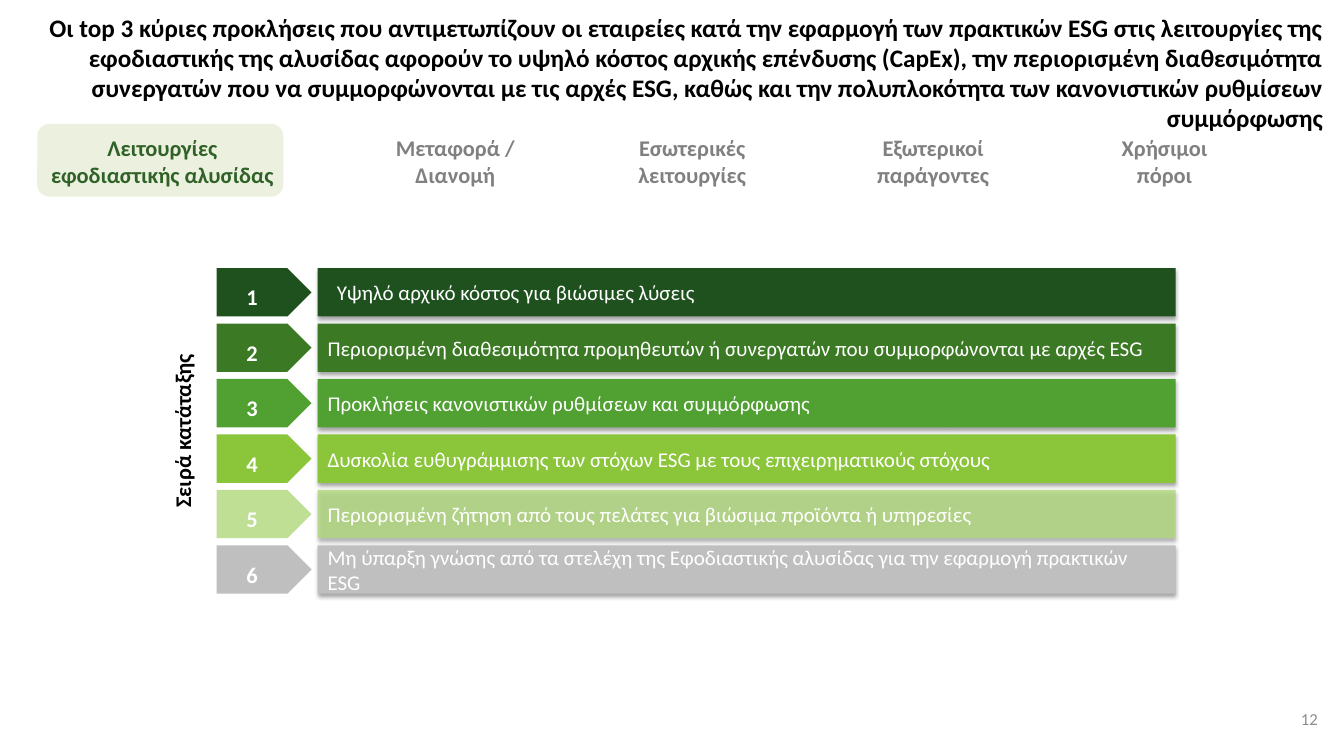
from dataclasses import dataclass

from lxml.etree import SubElement
from pptx import Presentation
from pptx.dml.color import RGBColor as RGB
from pptx.enum.shapes import MSO_SHAPE as SHAPE
from pptx.enum.text import MSO_ANCHOR as ANCHOR, PP_ALIGN as ALIGN
from pptx.oxml.ns import qn
from pptx.util import Pt

PX = 9144


@dataclass(frozen=True)
class Theme:
    font: str = "Calibri"
    title: int = 18
    heading: int = 16
    body: int = 15
    small: int = 12
    black: str = "000000"
    white: str = "FFFFFF"
    page: str = "8C8C8C"
    muted: str = "808080"
    active: str = "306228"
    highlight: str = "EBF1DE"
    ranks: tuple = ("1F511F", "3C7924", "50A032", "8AC53A", "B1D87E", "BFBFBF")
    faded: str = "B1D87E"
    faded_alpha: int = 82


class SlideBuilder:
    """Draws styled elements on one slide, with lengths in px."""

    def __init__(self, prs, theme):
        self.theme = theme
        self.slide = prs.slides.add_slide(prs.slide_layouts[6])

    def label(self, sp, text, size, color, bold=False, align=ALIGN.LEFT,
              anchor=ANCHOR.TOP, insets=(10, 5, 10, 5)):
        tf = sp.text_frame
        tf.word_wrap = True
        tf.vertical_anchor = anchor
        tf.margin_left, tf.margin_top, tf.margin_right, tf.margin_bottom = (
            v * PX for v in insets)
        tf.text = text
        for p in tf.paragraphs:
            p.alignment = align
            p.font.name = self.theme.font
            p.font.size = Pt(size)
            p.font.bold = bold
            p.font.color.rgb = RGB.from_string(color)

    def text(self, box, text, size, color, rotation=0, **style):
        sp = self.slide.shapes.add_textbox(*(v * PX for v in box))
        sp.rotation = rotation
        self.label(sp, text, size, color, **style)

    def shape(self, kind, box, fill, shadow=False):
        sp = self.slide.shapes.add_shape(kind, *(v * PX for v in box))
        sp.fill.solid()
        sp.fill.fore_color.rgb = RGB.from_string(fill)
        sp.line.fill.background()
        sp.shadow.inherit = False
        spPr = sp._element.spPr
        if fill == self.theme.faded:
            self.alpha(spPr.find(".//" + qn("a:srgbClr")), self.theme.faded_alpha)
        if shadow:
            outer = SubElement(spPr.find(qn("a:effectLst")), qn("a:outerShdw"),
                               blurRad=str(int(Pt(3.1))), dist=str(int(Pt(1.8))),
                               dir="5400000", rotWithShape="0")
            self.alpha(SubElement(outer, qn("a:srgbClr"), val=self.theme.black), 35)
        return sp

    def alpha(self, color, percent):
        SubElement(color, qn("a:alpha"), val=str(percent * 1000))

    def rank(self, number, top, text, fill, indent):
        t = self.theme
        arrow = self.shape(SHAPE.PENTAGON, (215, top, 94, 48), fill)
        self.label(arrow, str(number), t.heading, t.white, bold=True,
                   align=ALIGN.CENTER, anchor=ANCHOR.MIDDLE, insets=(0, 9, 12, 0))
        bar = self.shape(SHAPE.RECTANGLE, (315, top, 851, 48), fill, shadow=True)
        self.label(bar, text, t.body, t.white, anchor=ANCHOR.MIDDLE,
                   insets=(indent, 5, 10, 5))


TITLE = (
    "Οι top 3 κύριες προκλήσεις που αντιμετωπίζουν οι εταιρείες κατά την εφαρμογή "
    "των πρακτικών ESG στις λειτουργίες της εφοδιαστικής της αλυσίδας αφορούν το "
    "υψηλό κόστος αρχικής επένδυσης (CapEx), την περιορισμένη διαθεσιμότητα "
    "συνεργατών που να συμμορφώνονται με τις αρχές ESG, καθώς και την πολυπλοκότητα "
    "των κανονιστικών ρυθμίσεων συμμόρφωσης")
CHALLENGES = (
    "Υψηλό αρχικό κόστος για βιώσιμες λύσεις",
    "Περιορισμένη διαθεσιμότητα προμηθευτών ή συνεργατών που συμμορφώνονται με αρχές ESG",
    "Προκλήσεις κανονιστικών ρυθμίσεων και συμμόρφωσης",
    "Δυσκολία ευθυγράμμισης των στόχων ESG με τους επιχειρηματικούς στόχους",
    "Περιορισμένη ζήτηση από τους πελάτες για βιώσιμα προϊόντα ή υπηρεσίες",
    "Μη ύπαρξη γνώσης από τα στελέχη της Εφοδιαστικής αλυσίδας για την εφαρμογή "
    "πρακτικών ESG")
TABS = (
    (37, 248, "Λειτουργίες εφοδιαστικής αλυσίδας"),
    (359, 185, "Μεταφορά / Διανομή"),
    (594, 185, "Εσωτερικές λειτουργίες"),
    (833, 185, "Εξωτερικοί παράγοντες"),
    (1051, 208, "Χρήσιμοι\nπόροι"))


def main():
    prs = Presentation()
    prs.slide_width, prs.slide_height = 1333 * PX, 750 * PX
    t = Theme()
    s = SlideBuilder(prs, t)
    s.text((10, 7, 1312, 131), TITLE, t.title, t.black, bold=True, align=ALIGN.RIGHT)
    s.text((1084, 693, 233, 40), "12", t.small, t.page, align=ALIGN.RIGHT,
           anchor=ANCHOR.MIDDLE)
    for i, (challenge, fill) in enumerate(zip(CHALLENGES, t.ranks)):
        s.rank(i + 1, 266 + 55 * i, challenge, fill, indent=10 if i else 19)
    s.text((19, 409, 324, 37), "Σειρά κατάταξης", t.heading, t.black, rotation=270,
           bold=True, align=ALIGN.CENTER)
    s.shape(SHAPE.ROUNDED_RECTANGLE, (37, 123, 244, 72), t.highlight)
    for i, (left, width, label) in enumerate(TABS):
        s.text((left, 128, width, 64), label, t.heading, t.muted if i else t.active,
               bold=True, align=ALIGN.CENTER)
    prs.save("out.pptx")


if __name__ == "__main__":
    main()
